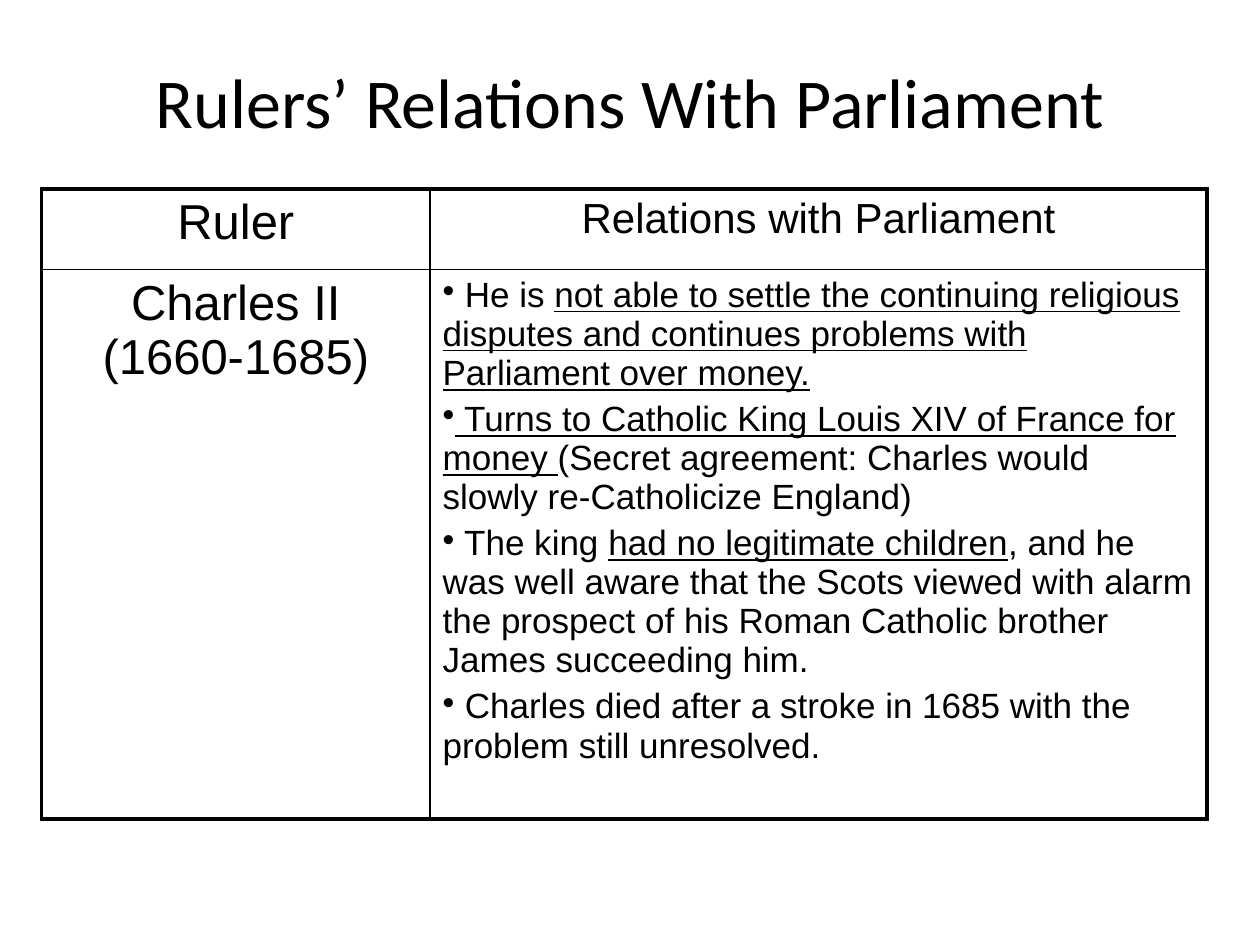
from dataclasses import dataclass

from lxml import etree
from pptx import Presentation
from pptx import util as u
from pptx.dml.color import RGBColor
from pptx.enum import text
from pptx.oxml import ns


@dataclass(frozen=True)
class Theme:
    ink: RGBColor = RGBColor(0, 0, 0)
    title_font: str = "Calibri"
    body_font: str = "Arial"
    title_size: int = 40
    ruler_size: int = 28
    heading_size: int = 24
    bullet_size: int = 20
    space_ratio: float = 0.2
    outer_line: float = 2.25
    inner_line: float = 1


THEME = Theme()
CENTER = text.PP_ALIGN.CENTER
LEFT = text.PP_ALIGN.LEFT

TITLE = "Rulers’ Relations With Parliament"
# Each bullet is a list of (wording, underlined) spans
BULLETS = [
    [(" He is ", False),
     ("not able to settle the continuing religious disputes and continues "
      "problems with Parliament over money.", True)],
    [(" Turns to Catholic King Louis XIV of France for money ", True),
     ("(Secret agreement: Charles would slowly re-Catholicize England)", False)],
    [(" The king ", False),
     ("had no legitimate children", True),
     (", and he was well aware that the Scots viewed with alarm the prospect "
      "of his Roman Catholic brother James succeeding him.", False)],
    [(" Charles died after a stroke in 1685 with the problem still unresolved.",
      False)],
]


def add_span(para, wording, font, size, underline=False):
    span = para.add_run()
    span.text = wording
    span.font.name = font
    span.font.size = u.Pt(size)
    span.font.color.rgb = THEME.ink
    if underline:
        span.font.underline = True


def add_bullet(para):
    props = para._p.get_or_add_pPr()
    props.set("marL", "0")
    props.set("indent", "0")
    etree.SubElement(props, ns.qn("a:buChar")).set("char", "•")


def fill_cell(cell, paragraphs, size, align=CENTER, bulleted=False):
    """Write paragraphs, each a list of (wording, underlined) spans."""
    frame = cell.text_frame
    for index, spans in enumerate(paragraphs):
        para = frame.add_paragraph() if index else frame.paragraphs[0]
        para.alignment = align
        para.space_before = u.Pt(size * THEME.space_ratio)
        if bulleted:
            add_bullet(para)
        for wording, underlined in spans:
            for number, line in enumerate(wording.split("\n")):
                if number:
                    para.add_line_break()
                add_span(para, line, THEME.body_font, size, underlined)


def set_borders(cell, widths):
    props = cell._tc.get_or_add_tcPr()
    for position, (side, width) in enumerate(widths.items()):
        line = etree.Element(ns.qn(f"a:ln{side}"), w=str(u.Pt(width)))
        fill = etree.SubElement(line, ns.qn("a:solidFill"))
        etree.SubElement(fill, ns.qn("a:srgbClr")).set("val", str(THEME.ink))
        props.insert(position, line)


def add_title(page, left, top, width, height):
    box = page.shapes.add_textbox(left, top, width, height)
    frame = box.text_frame
    frame.word_wrap = True
    frame.vertical_anchor = text.MSO_ANCHOR.MIDDLE
    para = frame.paragraphs[0]
    para.alignment = CENTER
    add_span(para, TITLE, THEME.title_font, THEME.title_size)


def add_ruler_table(page, left, top, width, height):
    table = page.shapes.add_table(2, 2, left, top, width, height).table
    table.first_row = table.horz_banding = False

    # Column and row sizes
    table.columns[0].width = width // 3
    table.columns[1].width = width - width // 3
    table.rows[0].height = u.Inches(0.64)
    table.rows[1].height = height - u.Inches(0.64)

    # Heavy frame, thin inner lines
    outer, inner = THEME.outer_line, THEME.inner_line
    for row in range(2):
        for column in range(2):
            cell = table.cell(row, column)
            cell.fill.background()
            set_borders(cell, {
                "L": inner if column else outer,
                "R": outer if column else inner,
                "T": inner if row else outer,
                "B": outer if row else inner,
            })

    # Wording
    fill_cell(table.cell(0, 0), [[("Ruler", False)]], THEME.ruler_size)
    fill_cell(table.cell(0, 1), [[("Relations with Parliament", False)]],
              THEME.heading_size)
    fill_cell(table.cell(1, 0), [[("Charles II\n(1660-1685)", False)]],
              THEME.ruler_size)
    fill_cell(table.cell(1, 1), BULLETS, THEME.bullet_size, LEFT, bulleted=True)


def main():
    deck = Presentation()
    deck.slide_width, deck.slide_height = u.Inches(10), u.Inches(7.5)
    page = deck.slides.add_slide(deck.slide_layouts[6])
    add_title(page, u.Inches(0.5), u.Inches(0.17), u.Inches(9), u.Inches(1.25))
    add_ruler_table(page, u.Inches(0.33), u.Inches(1.5),
                    u.Inches(9.25), u.Inches(5))
    deck.save("out.pptx")


if __name__ == "__main__":
    main()
